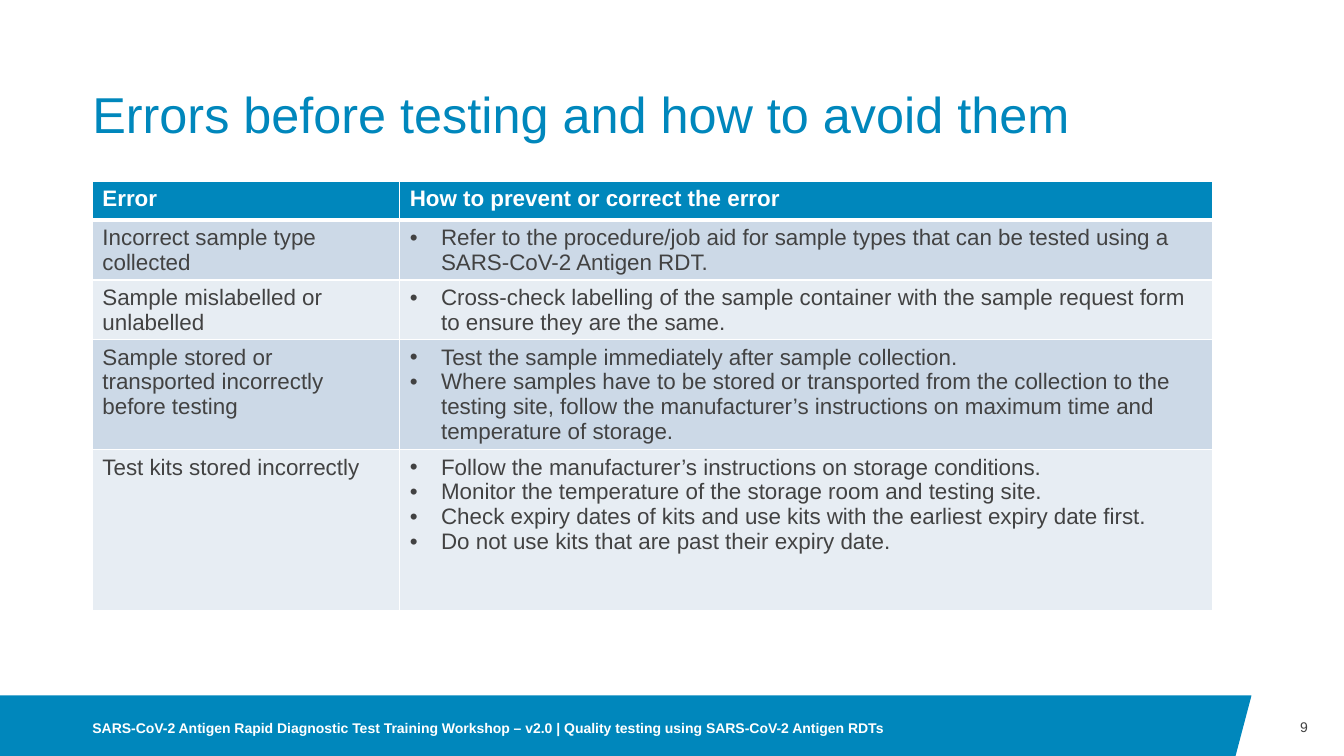
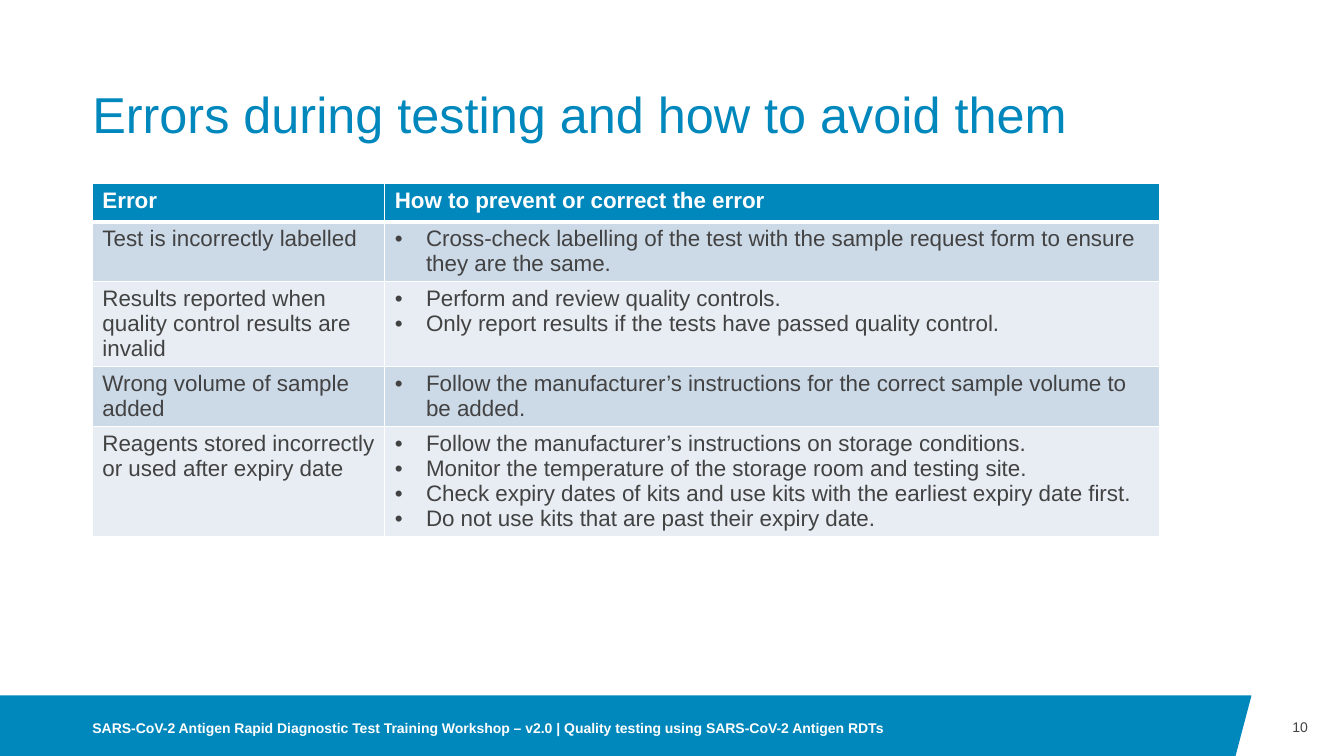
from dataclasses import dataclass

import lxml.etree
import pptx
import pptx.dml.color
import pptx.enum.text
import pptx.oxml.ns
import pptx.util

ANCHOR = pptx.enum.text.MSO_ANCHOR
ALIGN = pptx.enum.text.PP_ALIGN

FOOTER = ("SARS-CoV-2 Antigen Rapid Diagnostic Test Training Workshop – v2.0 | "
          "Quality testing using SARS-CoV-2 Antigen RDTs")
HEADINGS = ("Error", ["How to prevent or correct the error"])
STORAGE_ADVICE = [
    "Follow the manufacturer’s instructions on storage conditions.",
    "Monitor the temperature of the storage room and testing site.",
    "Check expiry dates of kits and use kits with the earliest expiry date first.",
    "Do not use kits that are past their expiry date.",
]
BEFORE_TESTING = [
    ("Incorrect sample type collected",
     ["Refer to the procedure/job aid for sample types that can be tested using a "
      "SARS-CoV-2 Antigen RDT."]),
    ("Sample mislabelled or unlabelled",
     ["Cross-check labelling of the sample container with the sample request form "
      "to ensure they are the same."]),
    ("Sample stored or transported incorrectly before testing",
     ["Test the sample immediately after sample collection.",
      "Where samples have to be stored or transported from the collection to the "
      "testing site, follow the manufacturer’s instructions on maximum time and "
      "temperature of storage."]),
    ("Test kits stored incorrectly", STORAGE_ADVICE),
]
DURING_TESTING = [
    ("Test is incorrectly labelled",
     ["Cross-check labelling of the test with the sample request form to ensure "
      "they are the same."]),
    ("Results reported when quality control results are invalid",
     ["Perform and review quality controls.",
      "Only report results if the tests have passed quality control."]),
    ("Wrong volume of sample added",
     ["Follow the manufacturer’s instructions for the correct sample volume to be "
      "added."]),
    ("Reagents stored incorrectly or used after expiry date", STORAGE_ADVICE),
]


@dataclass(frozen=True)
class Theme:
    font: str = "Arial"
    accent: str = "0087BC"
    ink: str = "424242"
    paper: str = "FFFFFF"
    stripes: tuple = ("CCD9E7", "E7EDF3")
    title_size: int = 36
    table_size: int = 16
    footer_size: int = 10
    border: int = 1
    header_border: int = 3


def grid(steps):
    """Length of a number of grid columns or rows, twelve to the inch."""
    return pptx.util.Inches(steps / 12)


def rgb(colour):
    return pptx.dml.color.RGBColor.from_string(colour)


class Deck:
    WIDTH, HEIGHT = 160, 90
    LEFT_MARGIN = 11
    BAND_TOP, BAND_RIGHT, BAND_SLANT = 82.8, 149, 1.9

    def __init__(self, theme):
        self.theme = theme
        self.presentation = pptx.Presentation()
        self.presentation.slide_width = grid(self.WIDTH)
        self.presentation.slide_height = grid(self.HEIGHT)
        self.layout = self.presentation.slide_layouts[5]
        self.slide = None

    def add_slide(self, title, number):
        first = self.slide is None
        self.slide = self.presentation.slides.add_slide(self.layout)
        if first:
            self.band()
        self.title(title)
        self.label(number, self.BAND_RIGHT, self.BAND_TOP, 6.7, 7.5,
                   self.theme.ink, align=ALIGN.RIGHT)
        self.label(FOOTER, self.LEFT_MARGIN, 83.4, 98.3, 6.6,
                   self.theme.paper, bold=True)

    def band(self):
        """Draw the footer band and hand it to the layout that all slides share."""
        top, right, bottom = map(grid, (self.BAND_TOP, self.BAND_RIGHT, self.HEIGHT))
        builder = self.slide.shapes.build_freeform(0, top)
        builder.add_line_segments(
            [(right, top), (grid(self.BAND_RIGHT - self.BAND_SLANT), bottom), (0, bottom)])
        band = builder.convert_to_shape()
        band.shadow.inherit = False
        band.fill.solid()
        band.fill.fore_color.rgb = rgb(self.theme.accent)
        band.line.fill.background()
        self.layout.shapes.element.append(band.element)

    def style(self, paragraph, size, colour, bold=False):
        paragraph.font.name = self.theme.font
        paragraph.font.size = pptx.util.Pt(size)
        paragraph.font.bold = bold
        paragraph.font.color.rgb = rgb(colour)

    def frame(self, shape, text, anchor):
        """Fill a shape with one wrapped paragraph without insets."""
        frame = shape.text_frame
        frame.text = text
        frame.word_wrap = True
        frame.auto_size = pptx.enum.text.MSO_AUTO_SIZE.NONE
        frame.vertical_anchor = anchor
        frame.margin_left = frame.margin_right = 0
        frame.margin_top = frame.margin_bottom = 0
        return frame.paragraphs[0]

    def title(self, text):
        title = self.slide.shapes.title
        title.left, title.top = grid(self.LEFT_MARGIN), grid(4.8)
        title.width, title.height = grid(138), grid(12.4)
        heading = self.frame(title, text, ANCHOR.BOTTOM)
        heading.alignment = ALIGN.LEFT
        heading.line_spacing = 0.9
        self.style(heading, self.theme.title_size, self.theme.accent)

    def label(self, text, left, top, width, height, colour, bold=False, align=ALIGN.LEFT):
        box = self.slide.shapes.add_textbox(*map(grid, (left, top, width, height)))
        line = self.frame(box, text, ANCHOR.MIDDLE)
        line.alignment = align
        self.style(line, self.theme.footer_size, colour, bold)

    def error_table(self, entries, top, columns, heights):
        table = self.slide.shapes.add_table(
            len(heights), len(columns), grid(self.LEFT_MARGIN), grid(top),
            grid(sum(columns)), grid(sum(heights))).table
        for column, width in zip(table.columns, columns):
            column.width = grid(width)
        for row, height in zip(table.rows, heights):
            row.height = grid(height)
        for index, (error, advice) in enumerate([HEADINGS, *entries]):
            self.cell(table.cell(index, 0), [error], index)
            self.cell(table.cell(index, 1), advice, index, bulleted=index > 0)

    def cell(self, cell, lines, row, bulleted=False):
        header = row == 0
        cell.fill.solid()
        cell.fill.fore_color.rgb = rgb(
            self.theme.accent if header else self.theme.stripes[(row - 1) % 2])
        self.borders(cell, row)
        cell.text_frame.text = "\n".join(lines)
        for paragraph in cell.text_frame.paragraphs:
            self.style(paragraph, self.theme.table_size,
                       self.theme.paper if header else self.theme.ink, header)
            if bulleted:
                self.bullet(paragraph)

    def borders(self, cell, row):
        thin, thick = self.theme.border, self.theme.header_border
        widths = {"lnL": thin, "lnR": thin,
                  "lnT": thick if row == 1 else thin,
                  "lnB": thick if row == 0 else thin}
        properties = cell._tc.get_or_add_tcPr()
        for position, (side, width) in enumerate(widths.items()):
            line = lxml.etree.Element(pptx.oxml.ns.qn(f"a:{side}"), w=str(pptx.util.Pt(width)))
            fill = lxml.etree.SubElement(line, pptx.oxml.ns.qn("a:solidFill"))
            lxml.etree.SubElement(fill, pptx.oxml.ns.qn("a:srgbClr"), val=self.theme.paper)
            properties.insert(position, line)

    def bullet(self, paragraph):
        properties = paragraph._p.get_or_add_pPr()
        indent = pptx.util.Inches(0.31)
        properties.set("marL", str(indent))
        properties.set("indent", str(-indent))
        font = lxml.etree.Element(pptx.oxml.ns.qn("a:buFont"), typeface=self.theme.font)
        mark = lxml.etree.Element(pptx.oxml.ns.qn("a:buChar"), char="•")
        properties.insert(0, font)
        properties.insert(1, mark)


def main():
    deck = Deck(Theme())
    deck.add_slide("Errors before testing and how to avoid them", "9")
    deck.error_table(BEFORE_TESTING, top=21.6, columns=(36.6, 96.8),
                     heights=(4.6, 7.1, 7.1, 13.1, 19.2))
    deck.add_slide("Errors during testing and how to avoid them", "10")
    deck.error_table(DURING_TESTING, top=21.8, columns=(34.8, 92.3),
                     heights=(4.6, 7.1, 10.1, 7.1, 13.1))
    deck.presentation.save("out.pptx")


if __name__ == "__main__":
    main()
